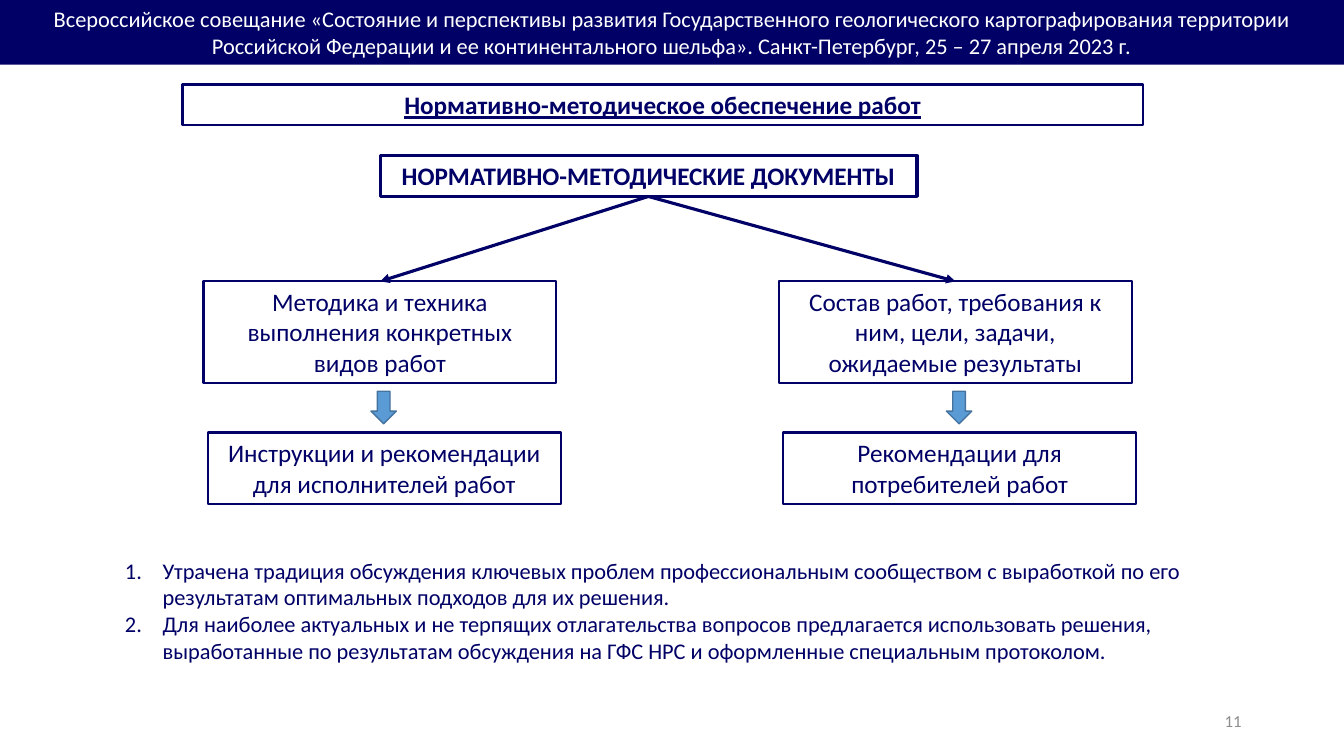
from dataclasses import dataclass

from lxml import etree
from pptx import Presentation
from pptx import util as u
from pptx.dml.color import RGBColor
from pptx.enum import shapes, text
from pptx.oxml import ns

Cm, Pt = u.Cm, u.Pt


@dataclass(frozen=True)
class Theme:
    font: str = "Calibri"
    navy: str = "000066"
    white: str = "FFFFFF"
    grey: str = "8C8C8C"
    arrow: str = "5B9BD5"
    arrow_edge: str = "43739E"
    body: int = 18
    small: int = 16
    number: int = 12
    thin: float = 1.5
    thick: float = 2.25


T = Theme()
COLUMN_STEP = 14.5
COLUMNS = [
    ("Методика и техника выполнения конкретных видов работ",
     "Инструкции и рекомендации для исполнителей работ"),
    ("Состав работ, требования к ним, цели, задачи, ожидаемые результаты",
     "Рекомендации для потребителей работ"),
]
CONCLUSIONS = [
    "Утрачена традиция обсуждения ключевых проблем профессиональным сообществом "
    "с выработкой по его результатам оптимальных подходов для их решения.",
    "Для наиболее актуальных и не терпящих отлагательства вопросов предлагается "
    "использовать решения, выработанные по результатам обсуждения на ГФС НРС "
    "и оформленные специальным протоколом.",
]


def rgb(value):
    return RGBColor.from_string(value)


def write(p, words, size=T.body, color=T.navy, bold=False, underline=False,
          align=text.PP_ALIGN.CENTER):
    p.alignment = align
    r = p.add_run()
    r.text = words
    f = r.font
    f.name, f.size, f.bold, f.underline = T.font, Pt(size), bold, underline
    f.color.rgb = rgb(color)


def set_frame(tf, anchor=text.MSO_ANCHOR.TOP):
    tf.word_wrap = True
    tf.auto_size = text.MSO_AUTO_SIZE.NONE
    tf.vertical_anchor = anchor
    tf.margin_left = tf.margin_right = Cm(0.25)
    tf.margin_top = tf.margin_bottom = Cm(0.13)
    return tf


def paint(sp, fill=None, line=None, width=T.thin):
    if fill:
        sp.fill.solid()
        sp.fill.fore_color.rgb = rgb(fill)
    else:
        sp.fill.background()
    if line:
        sp.line.color.rgb = rgb(line)
        sp.line.width = Pt(width)
    else:
        sp.line.fill.background()


def add_shape(s, kind, box, **look):
    sp = s.shapes.add_shape(kind, *map(Cm, box))
    sp.shadow.inherit = False
    paint(sp, **look)
    return sp


def add_box(s, box, words, fill=None, line=T.navy, width=T.thin, **fmt):
    sp = add_shape(s, shapes.MSO_SHAPE.RECTANGLE, box, fill=fill, line=line, width=width)
    write(set_frame(sp.text_frame).paragraphs[0], words, **fmt)


def set_title(s, box, words):
    sp = s.shapes.title
    sp.left, sp.top, sp.width, sp.height = map(Cm, box)
    paint(sp, line=T.navy)
    write(set_frame(sp.text_frame).paragraphs[0], words, bold=True, underline=True)


def add_arrow_line(s, start, end):
    c = s.shapes.add_connector(shapes.MSO_CONNECTOR.STRAIGHT, *map(Cm, start + end))
    c.line.color.rgb = rgb(T.navy)
    c.line.width = Pt(T.thick)
    etree.SubElement(c.line._get_or_add_ln(), ns.qn("a:tailEnd"), type="triangle")
    etree.SubElement(c._element.spPr, ns.qn("a:effectLst"))


def add_numbered_list(s, box, items):
    tf = set_frame(s.shapes.add_textbox(*map(Cm, box)).text_frame)
    for i, item in enumerate(items):
        p = tf.add_paragraph() if i else tf.paragraphs[0]
        write(p, item, size=T.small, align=text.PP_ALIGN.LEFT)
        pPr = p._p.get_or_add_pPr()
        pPr.set("marL", str(Cm(0.95)))
        pPr.set("indent", str(-Cm(0.95)))
        etree.SubElement(pPr, ns.qn("a:buFont"), typeface="+mj-lt")
        etree.SubElement(pPr, ns.qn("a:buAutoNum"), type="arabicPeriod")


def add_page_number(s, box, number):
    tf = set_frame(s.shapes.add_textbox(*map(Cm, box)).text_frame, text.MSO_ANCHOR.MIDDLE)
    write(tf.paragraphs[0], number, size=T.number, color=T.grey, align=text.PP_ALIGN.RIGHT)


def add_column(s, x, topic, result):
    add_box(s, (x, 7.09, 8.89, 2.57), topic)
    add_shape(s, shapes.MSO_SHAPE.DOWN_ARROW, (x + 4.22, 9.86, 0.64, 0.82),
              fill=T.arrow, line=T.arrow_edge, width=1)
    add_box(s, (x + 0.11, 10.9, 8.89, 1.8), result)
    add_arrow_line(s, (16.34, 4.95), (x + 4.45, 7.09))


def main():
    prs = Presentation()
    prs.slide_width, prs.slide_height = Cm(33.87), Cm(19.05)
    s = prs.slides.add_slide(prs.slide_layouts[5])
    add_box(s, (0, 0, 33.87, 1.63),
            "Всероссийское совещание «Состояние и перспективы развития Государственного "
            "геологического картографирования территории Российской Федерации и ее "
            "континентального шельфа». Санкт-Петербург, 25 – 27 апреля 2023 г.",
            fill=T.navy, line=None, size=T.small, color=T.white)
    set_title(s, (4.6, 2.13, 24.2, 1.02), "Нормативно-методическое обеспечение работ")
    add_box(s, (9.58, 3.92, 13.53, 1.03), "НОРМАТИВНО-МЕТОДИЧЕСКИЕ ДОКУМЕНТЫ",
            width=T.thick, bold=True)
    for i, (topic, result) in enumerate(COLUMNS):
        add_column(s, 5.13 + i * COLUMN_STEP, topic, result)
    add_numbered_list(s, (2.9, 13.9, 28.07, 3), CONCLUSIONS)
    add_page_number(s, (23.92, 17.66, 7.62, 1.01), "11")
    prs.save("out.pptx")


if __name__ == "__main__":
    main()
